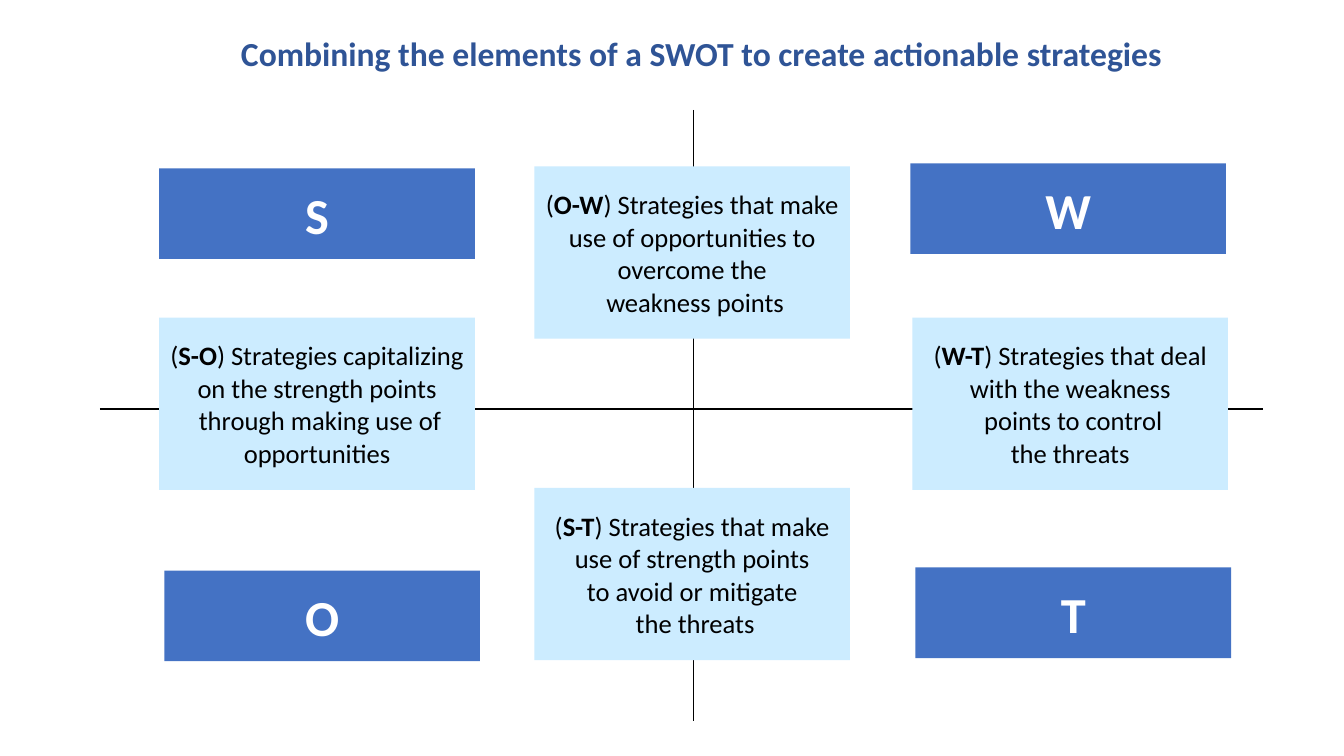
from dataclasses import dataclass

from pptx import Presentation, util as u
from pptx.dml.color import RGBColor as Rgb
from pptx.enum import shapes, text
from pptx.oxml import parse_xml
from pptx.oxml.ns import nsdecls


@dataclass(frozen=True)
class Theme:
    font: str = "Calibri"
    title: str = "2F5496"
    head: str = "4472C4"
    note: str = "CCECFF"
    dark: str = "000000"
    light: str = "FFFFFF"
    big: int = 36
    mid: int = 24
    small: int = 19


@dataclass(frozen=True)
class Head:
    letter: str
    left: float
    top: float


@dataclass(frozen=True)
class Note:
    pair: str
    body: str
    left: float
    top: float


@dataclass(frozen=True)
class Axis:
    left: float
    top: float
    right: float
    bottom: float


THEME = Theme()
WIDTH, HEIGHT = u.Inches(13.33), u.Inches(7.5)

# Positions are percent shares of the slide's width and height
WIDE = 23.48
HEAD_H, NOTE_H = 12, 22.8
SIDE, MID, FAR = 11.85, 39.76, 67.89

AXES = [Axis(51.6, 14.53, 51.6, 95.33), Axis(7.43, 54.13, 94, 54.13)]
NOTES = [
    Note("O-W", "Strategies that make use of opportunities to "
         "overcome the\n weakness points", MID, 22),
    Note("S-T", "Strategies that make use of strength points\n"
         "to avoid or mitigate\n the threats", MID, 64.53),
    Note("W-T", "Strategies that deal\nwith the weakness\n"
         " points to control\nthe threats", FAR, 42),
    Note("S-O", "Strategies capitalizing on the strength points\n"
         " through making use of opportunities", SIDE, 42),
]
HEADS = [
    Head("S", SIDE, 22.27),
    Head("W", 67.74, 21.6),
    Head("O", 12.23, 75.47),
    Head("T", 68.12, 75.07),
]


def col(share: float) -> int:
    return int(WIDTH * share / 100)


def row(share: float) -> int:
    return int(HEIGHT * share / 100)


def add_run(para, words: str, size: int, color: str, bold: bool = False) -> None:
    """Add words as runs, with a line break at each newline."""
    for num, line in enumerate(words.split("\n")):
        if num:
            para.add_line_break()
        run = para.add_run()
        run.text = line
        font = run.font
        font.name, font.size, font.bold = THEME.font, u.Pt(size), bold
        font.color.rgb = Rgb.from_string(color)


def add_box(slide, left: float, top: float, high: float, fill: str):
    """Draw a flat box and return it with its centred paragraph."""
    box = slide.shapes.add_shape(shapes.MSO_SHAPE.RECTANGLE, col(left), row(top),
                                 col(WIDE), row(high))
    box.shadow.inherit = False
    box.fill.solid()
    box.fill.fore_color.rgb = Rgb.from_string(fill)
    box.line.fill.background()
    frame = box.text_frame
    frame.word_wrap = True
    frame.vertical_anchor = text.MSO_ANCHOR.MIDDLE
    para = frame.paragraphs[0]
    para.alignment = text.PP_ALIGN.CENTER
    para.line_spacing, para.space_after = 1.02, u.Pt(8)
    return frame, para


def add_head(slide, head: Head) -> None:
    _, para = add_box(slide, head.left, head.top, HEAD_H, THEME.head)
    add_run(para, head.letter, THEME.big, THEME.light, True)


def add_note(slide, note: Note) -> None:
    frame, para = add_box(slide, note.left, note.top, NOTE_H, THEME.note)
    frame.margin_left = frame.margin_right = u.Inches(0.04)
    frame.margin_top = frame.margin_bottom = u.Inches(0.04)
    for words, bold in (("(", False), (note.pair, True), (f") {note.body}", False)):
        add_run(para, words, THEME.small, THEME.dark, bold)


def add_axis(slide, axis: Axis) -> None:
    line = slide.shapes.add_connector(
        shapes.MSO_CONNECTOR.STRAIGHT, col(axis.left), row(axis.top),
        col(axis.right), row(axis.bottom))
    line.line.width = u.Pt(1)
    line.line.color.rgb = Rgb.from_string(THEME.dark)
    line._element.spPr.append(parse_xml(f"<a:effectLst {nsdecls('a')}/>"))


def add_title(slide, words: str) -> None:
    title = slide.shapes.title
    title.left, title.top = col(17.18), row(3.73)
    title.width, title.height = col(70.74), row(6.67)
    frame = title.text_frame
    frame.word_wrap = False
    frame.auto_size = text.MSO_AUTO_SIZE.SHAPE_TO_FIT_TEXT
    frame.vertical_anchor = text.MSO_ANCHOR.MIDDLE
    para = frame.paragraphs[0]
    para.alignment = text.PP_ALIGN.JUSTIFY
    add_run(para, words, THEME.mid, THEME.title, True)


def main() -> None:
    deck = Presentation()
    deck.slide_width, deck.slide_height = WIDTH, HEIGHT
    slide = deck.slides.add_slide(deck.slide_layouts.get_by_name("Title Only"))

    # Title
    add_title(slide, "Combining the elements of a SWOT to create actionable strategies")

    # Axes behind the boxes
    for axis in AXES:
        add_axis(slide, axis)

    # Strategy notes and SWOT letters
    for note in NOTES:
        add_note(slide, note)
    for head in HEADS:
        add_head(slide, head)

    deck.save("out.pptx")


if __name__ == "__main__":
    main()
